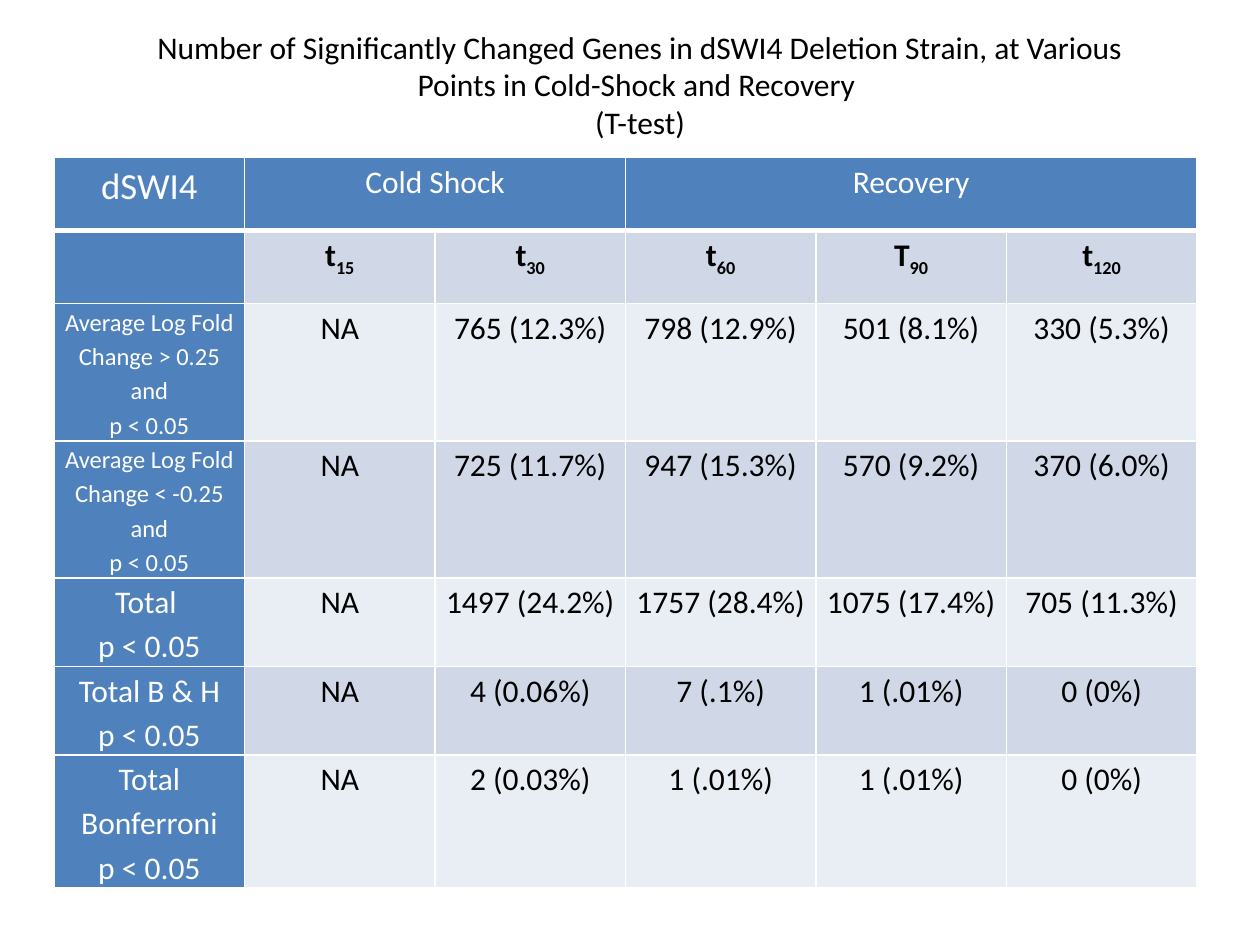
from lxml.etree import SubElement
from pptx import Presentation
from pptx.dml.color import RGBColor
from pptx.enum.text import PP_ALIGN
from pptx.oxml.ns import qn
from pptx.util import Inches, Pt

WHITE, BLACK, BLUE = "FFFFFF", "000000", "4F81BD"
BANDS = ("D0D8E8", "E9EDF4")
SLIDE_WIDTH, SLIDE_HEIGHT = Inches(10), Inches(7.5)
PHASES = (("Cold Shock", 1, 2), ("Recovery", 3, 5))
TIMES = (("t", "15"), ("t", "30"), ("t", "60"), ("T", "90"), ("t", "120"))
THRESHOLD = "p < 0.05"
RESULTS = (
    ("Average Log Fold Change > 0.25 and", 14,
     ("NA", "765 (12.3%)", "798 (12.9%)", "501 (8.1%)", "330 (5.3%)")),
    ("Average Log Fold Change < -0.25 and", 14,
     ("NA", "725 (11.7%)", "947 (15.3%)", "570 (9.2%)", "370 (6.0%)")),
    ("Total ", 18,
     ("NA", "1497 (24.2%)", "1757 (28.4%)", "1075 (17.4%)", "705 (11.3%)")),
    ("Total B & H", 18,
     ("NA", "4 (0.06%)", "7 (.1%)", "1 (.01%)", "0 (0%)")),
    ("Total Bonferroni", 18,
     ("NA", "2 (0.03%)", "1 (.01%)", "1 (.01%)", "0 (0%)")),
)


def color(hex_code):
    """Turn a hex string into a colour."""
    return RGBColor.from_string(hex_code)


def write(frame, *lines, size=18, ink=BLACK, bold=False, spacing=None, subscript=None):
    """Write centred lines, with an optional subscript after the last one."""
    for index, line in enumerate(lines):
        paragraph = frame.paragraphs[0] if index == 0 else frame.add_paragraph()
        paragraph.alignment = PP_ALIGN.CENTER
        paragraph.line_spacing = spacing
        paragraph.add_run().text = line
    if subscript:
        lowered = paragraph.add_run()
        lowered.text = subscript
        lowered.font._element.set("baseline", "-25000")
    for paragraph in frame.paragraphs:
        for run in paragraph.runs:
            font = run.font
            font.name, font.size, font.bold = "Calibri", Pt(size), bold
            font.color.rgb = color(ink)


def style_cell(cell, fill, bottom=1):
    """Set the margins, white rules and fill of a cell."""
    cell.margin_left = cell.margin_right = Inches(0.07)
    cell.margin_top = cell.margin_bottom = 0
    properties = cell._tc.get_or_add_tcPr()
    for side, width in (("L", 1), ("R", 1), ("T", 1), ("B", bottom)):
        rule = SubElement(properties, qn(f"a:ln{side}"), w=str(Pt(width)))
        SubElement(SubElement(rule, qn("a:solidFill")), qn("a:srgbClr"), val=WHITE)
    cell.fill.solid()
    cell.fill.fore_color.rgb = color(fill)


def add_title(slide, left, top, width, height):
    """Place the slide heading in its box."""
    frame = slide.shapes.add_textbox(left, top, width, height).text_frame
    frame.word_wrap = True
    write(frame,
          "Number of Significantly Changed Genes in dSWI4 Deletion Strain, "
          "at Various Points in Cold-Shock and Recovery ",
          "(T-test)")


def add_gene_table(slide, left, top, width, height):
    """Place the table of gene counts by time point in its box."""
    rows, columns = len(RESULTS) + 2, len(TIMES) + 1
    table = slide.shapes.add_table(rows, columns, left, top, width, height).table
    table.first_row = table.horz_banding = False
    for row in range(rows):
        for column in range(columns):
            is_heading = row == 0 or column == 0
            style_cell(table.cell(row, column),
                       BLUE if is_heading else BANDS[(row - 1) % 2],
                       bottom=3 if row == 0 else 1)

    def fill_in(row, column, *lines, **style):
        """Write lines into one cell."""
        write(table.cell(row, column).text_frame, *lines, spacing=1.15, **style)

    fill_in(0, 0, "dSWI4", size=21, ink=WHITE)
    for phase, first, last in PHASES:
        table.cell(0, first).merge(table.cell(0, last))
        fill_in(0, first, phase, ink=WHITE)
    for column, (symbol, minutes) in enumerate(TIMES, 1):
        fill_in(1, column, symbol, bold=True, subscript=minutes)
    for row, (criterion, size, counts) in enumerate(RESULTS, 2):
        fill_in(row, 0, criterion, THRESHOLD, size=size, ink=WHITE)
        for column, count in enumerate(counts, 1):
            fill_in(row, column, count)


def main():
    """Build the slide and save it."""
    deck = Presentation()
    deck.slide_width, deck.slide_height = SLIDE_WIDTH, SLIDE_HEIGHT
    slide = deck.slides.add_slide(deck.slide_layouts[6])
    add_gene_table(slide, Inches(0.43), Inches(1.25), Inches(9.07), Inches(0.58 * 7))
    add_title(slide, Inches(1.08), Inches(0.17), Inches(8), Inches(1.01))
    deck.save("out.pptx")


if __name__ == "__main__":
    main()
